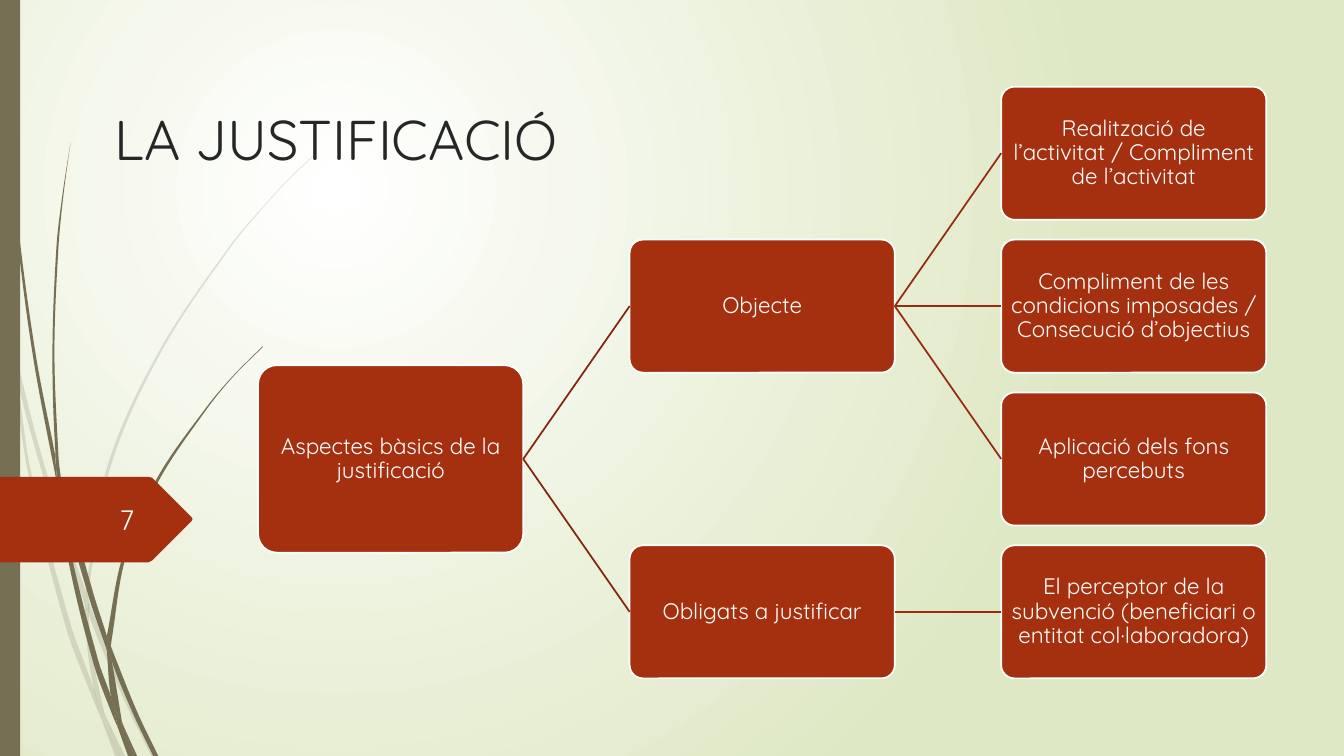
from dataclasses import dataclass
from math import dist

from lxml.etree import SubElement
from pptx import Presentation
from pptx.dml.color import RGBColor
from pptx.enum.shapes import MSO_CONNECTOR, MSO_SHAPE
from pptx.enum.text import MSO_ANCHOR, MSO_AUTO_SIZE, PP_ALIGN
from pptx.oxml.ns import qn
from pptx.util import Inches, Pt

FONT = "Quicksand"
WHITE = RGBColor(0xFF, 0xFF, 0xFF)
PALE_GREEN = RGBColor(0xDF, 0xE8, 0xC4)
OLIVE = RGBColor(0x76, 0x6F, 0x54)
RUST = RGBColor(0xA5, 0x30, 0x10)
DARK_RUST = RGBColor(0x84, 0x26, 0x0D)
MID_RUST = RGBColor(0x96, 0x2C, 0x0F)
INK = RGBColor(0x26, 0x26, 0x26)
NUMBER_WHITE = RGBColor(0xFE, 0xFF, 0xFF)

COLUMN_LEFT, COLUMN_PITCH = 2.56, (9.93 - 2.56) / 2
ROW_TOP, ROW_PITCH = 0.86, (5.41 - 0.86) / 3
BOX_WIDTH, BOX_HEIGHT, ROOT_HEIGHT = 2.63, 1.32, 1.86
BRANCH_COLOURS = (DARK_RUST, MID_RUST)

Point = tuple[float, float]
Edge = tuple[Point, ...]


@dataclass(frozen=True)
class Blade:
    """A piece of grass: its two edges, both from top to bottom."""
    left: Edge
    right: Edge


@dataclass(frozen=True)
class Topic:
    text: str
    row: int
    children: tuple["Topic", ...] = ()


FAINT_GRASS = (
    Blade(((0, 2.99), (0.1, 3.44), (0.11, 3.5)), ((0, 2.82), (0.09, 3.22), (0.11, 3.5))),
    Blade(((0.14, 3.45), (0.17, 3.76), (0.36, 4.49), (0.58, 5.22), (0.84, 5.99)),
          ((0.14, 3.45), (0.36, 4.33), (0.62, 5.2), (0.85, 5.86))),
    Blade(((0.88, 5.96), (0.88, 6.1), (1.23, 6.94), (1.5, 7.5)),
          ((0.88, 5.96), (0.92, 6.07), (1.27, 6.92), (1.55, 7.5))),
    Blade(((1.05, 7.11), (1.19, 7.5)), ((1.05, 7.11), (1.24, 7.5))),
    Blade(((0.11, 3.5), (0.28, 4.7), (0.65, 6.21), (0.92, 6.93), (1.01, 7.14)),
          ((0.11, 3.5), (0.17, 3.76), (0.31, 4.69), (0.7, 6.19), (0.93, 6.83), (0.99, 7.07))),
    Blade(((0.84, 5.99), (0.87, 6.46), (0.93, 6.83), (0.96, 6.92), (1.05, 7.11)),
          ((0.84, 5.99), (0.88, 6.08), (0.88, 6.1), (0.91, 6.46), (1.03, 7.06))),
    Blade(((3.12, 1.53), (2.89, 1.75), (2.68, 1.97), (2.28, 2.44), (1.58, 3.48), (1.07, 4.61),
           (0.85, 5.84), (0.85, 5.86)),
          ((3.12, 1.54), (2.9, 1.75), (2.68, 1.98), (2.29, 2.45), (1.6, 3.49), (1.1, 4.62),
           (0.88, 5.84), (0.88, 5.96))),
    Blade(((1.01, 7.14), (1.14, 7.5)), ((1.01, 7.14), (1.19, 7.5))),
    Blade(((0.85, 5.86), (0.84, 5.99), (0.88, 6.08)), ((0.85, 5.86), (0.88, 5.96), (0.88, 6.1))),
    Blade(((0.93, 6.83), (0.99, 7.07), (1.01, 7.14), (1.19, 7.5)),
          ((0.93, 6.83), (0.96, 6.92), (1.05, 7.11), (1.19, 7.5))),
)
DARK_GRASS = (
    Blade(((0.03, 0), (0.04, 0.48), (0.07, 1.1), (0.17, 2.33), (0.33, 3.55), (0.56, 4.77),
           (0.57, 4.81)),
          ((0.04, 0), (0.05, 0.48), (0.08, 1.09), (0.19, 2.32), (0.36, 3.55), (0.55, 4.53),
           (0.55, 4.57))),
    Blade(((0.6, 4.72), (0.64, 5.05), (0.88, 5.92), (1.06, 6.45)),
          ((0.6, 4.72), (0.93, 5.9), (1.06, 6.31), (1.06, 6.33))),
    Blade(((1.1, 6.41), (1.11, 6.56), (1.32, 7.08), (1.52, 7.5)),
          ((1.1, 6.41), (1.13, 6.49), (1.36, 7.06), (1.57, 7.5))),
    Blade(((0.57, 4.77), (0.68, 5.57), (0.93, 6.59), (1.11, 7.08), (1.17, 7.22)),
          ((0.57, 4.77), (0.64, 5.05), (0.72, 5.56), (0.98, 6.57), (1.1, 6.91), (1.16, 7.17))),
    Blade(((0.7, 1.41), (0.62, 1.93), (0.56, 2.45), (0.52, 3.49), (0.55, 4.49), (0.6, 4.72)),
          ((0.7, 1.41), (0.63, 1.93), (0.58, 2.45), (0.54, 3.49), (0.58, 4.53), (0.6, 4.72))),
    Blade(((1.22, 7.19), (1.33, 7.5)), ((1.22, 7.19), (1.36, 7.5))),
    Blade(((0.55, 4.49), (0.55, 4.53), (0.57, 4.77), (0.64, 5.05)),
          ((0.55, 4.49), (0.6, 4.72), (0.64, 5.05))),
    Blade(((2.6, 3.44), (2.31, 3.73), (2.04, 4.05), (1.56, 4.74), (1.22, 5.51), (1.06, 6.31)),
          ((2.61, 3.44), (2.31, 3.74), (2.05, 4.06), (1.58, 4.76), (1.25, 5.52), (1.11, 6.33),
           (1.1, 6.41))),
    Blade(((1.17, 7.22), (1.27, 7.5)), ((1.17, 7.22), (1.31, 7.5))),
    Blade(((1.06, 6.45), (1.1, 6.91), (1.16, 7.06), (1.22, 7.19)),
          ((1.06, 6.45), (1.09, 6.51), (1.11, 6.56), (1.21, 7.16))),
    Blade(((1.06, 6.31), (1.06, 6.45), (1.09, 6.51)), ((1.06, 6.31), (1.1, 6.41), (1.11, 6.56))),
    Blade(((1.1, 6.91), (1.16, 7.17), (1.17, 7.22), (1.3, 7.5)),
          ((1.1, 6.91), (1.16, 7.06), (1.22, 7.19), (1.33, 7.5))),
)
NUMBER_TAG = ((0, 4.73), (1.47, 4.73), (1.51, 4.74), (1.9, 5.13), (1.91, 5.15),
              (1.9, 5.17), (1.51, 5.56), (1.47, 5.58), (0, 5.58))

JUSTIFICATION = Topic("Aspectes bàsics de la justificació", 2, (
    Topic("Objecte", 1, (
        Topic("Realització de l’activitat / Compliment de l’activitat", 0),
        Topic("Compliment de les condicions imposades / Consecució d’objectius", 1),
        Topic("Aplicació dels fons percebuts", 2))),
    Topic("Obligats a justificar", 3, (
        Topic("El perceptor de la subvenció (beneficiari o entitat col·laboradora)", 3),)),
))


def curve(edge: Edge) -> list[Point]:
    """Two handles and an end point for each stretch of a smooth edge."""
    def handle(i: int, reach: float) -> Point:
        before, here, after = edge[max(i - 1, 0)], edge[i], edge[min(i + 1, len(edge) - 1)]
        share = reach / (dist(before, here) + dist(here, after)) / 3
        return here[0] + (after[0] - before[0]) * share, here[1] + (after[1] - before[1]) * share

    stretches = []
    for i, (start, end) in enumerate(zip(edge, edge[1:])):
        chord = dist(start, end)
        stretches += [handle(i, chord), handle(i + 1, -chord), end]
    return stretches


def paint(shape, colour: RGBColor) -> None:
    shape.shadow.inherit = False
    shape.fill.solid()
    shape.fill.fore_color.rgb = colour
    shape.line.fill.background()


def add_outline(slide, points, colour: RGBColor):
    corners = [(Inches(x), Inches(y)) for x, y in points]
    builder = slide.shapes.build_freeform(*corners[0])
    builder.add_line_segments(corners[1:], close=True)
    outline = builder.convert_to_shape()
    paint(outline, colour)
    return outline


def add_blade(slide, blade: Blade, opacity: int) -> None:
    upward = blade.right[::-1]
    foot = [blade.left[-1], upward[0], upward[0]]
    points = [blade.left[0], *curve(blade.left), *foot, *curve(upward)]
    outline = add_outline(slide, points, OLIVE).element
    # Each three points of the outline become one Bézier stretch
    stops = list(outline.iter(qn("a:lnTo")))
    for first, second, third in zip(stops[::3], stops[1::3], stops[2::3]):
        first.tag = qn("a:cubicBezTo")
        for stop in (second, third):
            first.append(stop[0])
            stop.getparent().remove(stop)
    if opacity < 100:
        tint = outline.spPr.find(qn("a:solidFill"))[0]
        SubElement(tint, qn("a:alpha")).set("val", str(opacity * 1000))


def write(frame, text: str, size: int, colour: RGBColor, align, anchor) -> None:
    frame.word_wrap = True
    frame.auto_size = MSO_AUTO_SIZE.NONE
    frame.vertical_anchor = anchor
    frame.paragraphs[0].alignment = align
    run = frame.paragraphs[0].add_run()
    run.text = text
    run.font.name, run.font.size, run.font.color.rgb = FONT, Pt(size), colour


def add_topic(slide, topic: Topic, level: int = 0, parent=None) -> None:
    """Draw a topic, its branch from the parent, and all its children."""
    height = BOX_HEIGHT if level else ROOT_HEIGHT
    top = ROW_TOP + topic.row * ROW_PITCH + (BOX_HEIGHT - height) / 2
    left = COLUMN_LEFT + level * COLUMN_PITCH
    box = slide.shapes.add_shape(
        MSO_SHAPE.ROUNDED_RECTANGLE, *map(Inches, (left, top, BOX_WIDTH, height)))
    box.adjustments[0] = 0.1
    paint(box, RUST)
    box.line.color.rgb, box.line.width = WHITE, Pt(1.25)
    frame = box.text_frame
    frame.margin_left = frame.margin_right = frame.margin_top = frame.margin_bottom = Inches(0.01)
    write(frame, topic.text, 16, WHITE, PP_ALIGN.CENTER, MSO_ANCHOR.MIDDLE)
    frame.paragraphs[0].line_spacing = 0.9
    if parent is not None:
        branch = slide.shapes.add_connector(MSO_CONNECTOR.STRAIGHT, 0, 0, 0, 0)
        branch.begin_connect(parent, 3)
        branch.end_connect(box, 1)
        branch.line.color.rgb, branch.line.width = BRANCH_COLOURS[level - 1], Pt(1.25)
        SubElement(branch.element.spPr, qn("a:effectLst"))
    for child in topic.children:
        add_topic(slide, child, level + 1, box)


def add_background(slide) -> None:
    fill = slide.background.fill
    fill.gradient()
    for stop, colour, position in zip(fill.gradient_stops, (WHITE, PALE_GREEN), (0, 1)):
        stop.color.rgb, stop.position = colour, position
    gradient = slide.element.find(".//" + qn("a:gradFill"))
    gradient.remove(gradient.find(qn("a:lin")))
    circle = SubElement(gradient, qn("a:path"), {"path": "circle"})
    focus = {"l": "50000", "t": "50000", "r": "100000", "b": "100000"}
    SubElement(circle, qn("a:fillToRect"), focus)


def main() -> None:
    deck = Presentation()
    deck.slide_width, deck.slide_height = Inches(13.33), Inches(7.5)
    slide = deck.slides.add_slide(deck.slide_layouts[5])
    add_background(slide)
    # Grass, side band and number tag
    for grass, opacity in ((FAINT_GRASS, 20), (DARK_GRASS, 100)):
        for blade in grass:
            add_blade(slide, blade, opacity)
    band = slide.shapes.add_shape(MSO_SHAPE.RECTANGLE, 0, 0, Inches(0.2), deck.slide_height)
    paint(band, OLIVE)
    add_outline(slide, NUMBER_TAG, RUST)
    number = slide.shapes.add_textbox(*map(Inches, (0.58, 4.95, 0.85, 0.4)))
    write(number.text_frame, "7", 20, NUMBER_WHITE, PP_ALIGN.RIGHT, MSO_ANCHOR.MIDDLE)
    # Title and topic tree
    title = slide.shapes.title
    title.left, title.top, title.width, title.height = map(Inches, (0.58, 0.76, 5.51, 0.99))
    write(title.text_frame, "LA JUSTIFICACIÓ", 40, INK, PP_ALIGN.CENTER, MSO_ANCHOR.BOTTOM)
    add_topic(slide, JUSTIFICATION)
    deck.save("out.pptx")


if __name__ == "__main__":
    main()
